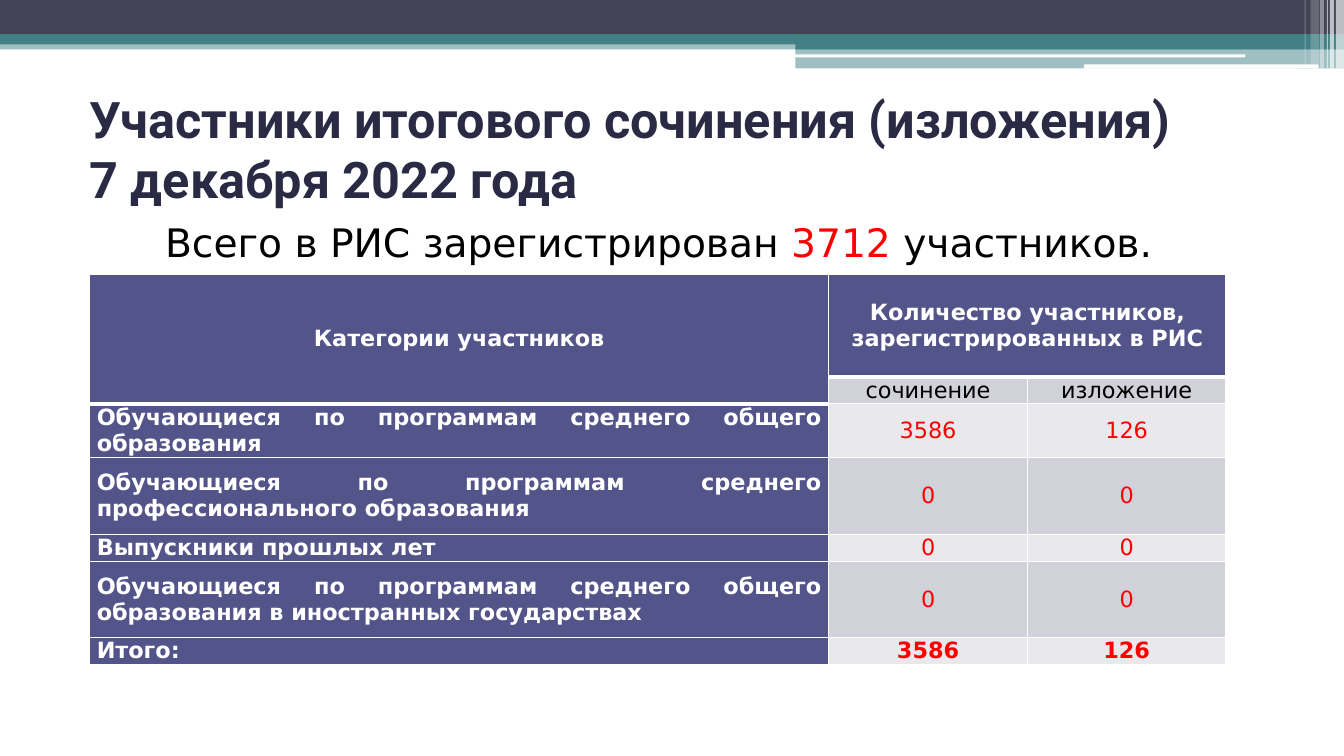
from dataclasses import dataclass

from lxml import etree
from pptx import Presentation
from pptx.dml.color import RGBColor
from pptx.enum.shapes import MSO_SHAPE
from pptx.enum.text import MSO_ANCHOR, PP_ALIGN
from pptx.oxml.ns import qn
from pptx.util import Inches, Pt

RECT, ROUNDED = MSO_SHAPE.RECTANGLE, MSO_SHAPE.ROUNDED_RECTANGLE
TOP, MIDDLE = MSO_ANCHOR.TOP, MSO_ANCHOR.MIDDLE
LEFT, CENTER, JUSTIFY = PP_ALIGN.LEFT, PP_ALIGN.CENTER, PP_ALIGN.JUSTIFY


@dataclass(frozen=True)
class Theme:
    title_font: str = "Roboto"
    body_font: str = "DejaVu Sans"
    title_size: int = 36
    body_size: int = 28
    table_size: int = 16
    navy: str = "2A2A45"
    slate: str = "424456"
    teal: str = "438086"
    violet: str = "53548A"
    dark_band: str = "D1D1DA"
    light_band: str = "E9E9ED"
    white: str = "FFFFFF"
    black: str = "000000"
    red: str = "FF0000"


THEME = Theme()
WIDTH, HEIGHT = 13.33, 7.5

TITLE = ["Участники итогового сочинения (изложения) ", "7 декабря 2022 года"]
SUMMARY = [
    ("Всего в РИС зарегистрирован ", THEME.black),
    ("3712 ", THEME.red),
    ("участников.", THEME.black),
]
HEADINGS = ["Категории участников", "Количество участников, зарегистрированных в РИС"]
SUBHEADINGS = ["сочинение", "изложение"]
CATEGORIES = [
    ("Обучающиеся по программам среднего общего образования", 3586, 126),
    ("Обучающиеся по программам среднего профессионального образования", 0, 0),
    ("Выпускники прошлых лет", 0, 0),
    ("Обучающиеся по программам среднего общего образования в иностранных государствах", 0, 0),
    ("Итого: ", 3586, 126),
]

# shape, left, top, width, height, colour, opacity in percent
BANDS = [
    (RECT, 0, 0.4, WIDTH, 0.09, THEME.teal, 50),
    (RECT, 0, 0, WIDTH, 0.34, THEME.slate, 100),
    (RECT, 0, 0.34, WIDTH, 0.1, THEME.teal, 100),
    (RECT, 7.89, 0.39, 5.44, 0.1, THEME.teal, 100),
    (RECT, 7.89, 0.48, 5.44, 0.2, THEME.teal, 50),
    (ROUNDED, 7.88, 0.54, 4.47, 0.03, THEME.white, 100),
    (ROUNDED, 10.75, 0.64, 2.33, 0.04, THEME.white, 100),
]
# left, width, height, opacity in percent
STRIPES = [
    (13.25, 0.08, 0.68, 65),
    (13.19, 0.04, 0.68, 65),
    (13.16, 0.01, 0.68, 60),
    (13.09, 0.04, 0.68, 40),
    (13, 0.08, 0.64, 20),
    (12.94, 0.01, 0.64, 30),
]

TABLE_LEFT, TABLE_TOP = 0.89, 2.72
COLUMNS = [7.33, 1.97, 1.97]
ROWS = [1.02, 0.25, 0.51, 0.76, 0.25, 0.76, 0.25]
HEADER_ROWS = 2


def add_band(page, kind, left, top, width, height, colour, opacity):
    band = page.shapes.add_shape(kind, *map(Inches, (left, top, width, height)))
    band.shadow.inherit = False
    band.line.fill.background()
    band.fill.solid()
    band.fill.fore_color.rgb = RGBColor.from_string(colour)
    if opacity < 100:
        tone = band.fill._xPr.find(".//" + qn("a:srgbClr"))
        etree.SubElement(tone, qn("a:alpha"), val=str(opacity * 1000))


def add_span(para, text, font, size, colour, bold=False):
    span = para.add_run()
    span.text = text
    for name, value in {"name": font, "size": Pt(size), "bold": bold}.items():
        setattr(span.font, name, value)
    span.font.color.rgb = RGBColor.from_string(colour)


def add_text_area(page, left, top, width, height, anchor):
    """Add a wrapped text box and return its first paragraph."""
    box = page.shapes.add_textbox(*map(Inches, (left, top, width, height)))
    box.text_frame.word_wrap = True
    box.text_frame.vertical_anchor = anchor
    para = box.text_frame.paragraphs[0]
    para.alignment = LEFT
    return para


def set_borders(cell, bottom):
    properties = cell._tc.get_or_add_tcPr()
    for side, points in {"L": 1, "R": 1, "T": 1, "B": bottom}.items():
        line = etree.SubElement(properties, qn("a:ln" + side), w=str(Pt(points)))
        fill = etree.SubElement(line, qn("a:solidFill"))
        etree.SubElement(fill, qn("a:srgbClr"), val=THEME.white)


def format_cell(cell, text, fill, colour, bold, align=CENTER, bottom=1):
    set_borders(cell, bottom)
    cell.fill.solid()
    cell.fill.fore_color.rgb = RGBColor.from_string(fill)
    layout = {
        "vertical_anchor": MIDDLE,
        "margin_left": Inches(0.07),
        "margin_right": Inches(0.07),
        "margin_top": 0,
        "margin_bottom": 0,
    }
    for name, value in layout.items():
        setattr(cell, name, value)
    para = cell.text_frame.paragraphs[0]
    para.alignment = align
    para.font.size = Pt(THEME.table_size)
    if text:
        add_span(para, text, THEME.body_font, THEME.table_size, colour, bold)


def add_participants_table(page):
    frame = page.shapes.add_table(
        len(ROWS), len(COLUMNS), Inches(TABLE_LEFT), Inches(TABLE_TOP),
        Inches(sum(COLUMNS)), Inches(sum(ROWS)))
    table = frame.table
    table.first_row = table.horz_banding = False
    for column, width in zip(table.columns, COLUMNS):
        column.width = Inches(width)
    for row, height in zip(table.rows, ROWS):
        row.height = Inches(height)

    for index, text in enumerate(HEADINGS + [""]):
        format_cell(table.cell(0, index), text, THEME.violet, THEME.white, True, bottom=3)
    format_cell(table.cell(1, 0), "", THEME.violet, THEME.white, True, bottom=3)
    for index, text in enumerate(SUBHEADINGS, 1):
        format_cell(table.cell(1, index), text, THEME.dark_band, THEME.black, False)
    table.cell(0, 0).merge(table.cell(1, 0))
    table.cell(0, 1).merge(table.cell(0, 2))

    for row, (category, *counts) in enumerate(CATEGORIES, HEADER_ROWS):
        format_cell(table.cell(row, 0), category, THEME.violet, THEME.white, True, JUSTIFY)
        band = THEME.dark_band if row % 2 else THEME.light_band
        is_total = row == len(ROWS) - 1
        for column, count in enumerate(counts, 1):
            format_cell(table.cell(row, column), str(count), band, THEME.red, is_total)


def main():
    deck = Presentation()
    deck.slide_width, deck.slide_height = Inches(WIDTH), Inches(HEIGHT)
    page = deck.slides.add_slide(deck.slide_layouts[6])

    for band in BANDS:
        add_band(page, *band)
    for left, width, height, opacity in STRIPES:
        add_band(page, RECT, left, 0, width, height, THEME.white, opacity)

    title = add_text_area(page, 0.79, 1.07, 11.73, 0.8, MIDDLE)
    for index, line in enumerate(TITLE):
        if index:
            title.add_line_break()
        add_span(title, line, THEME.title_font, THEME.title_size, THEME.navy, True)

    summary = add_text_area(page, 1.42, 2.12, 10.5, 0.71, TOP)
    summary.space_before = Pt(3)
    indents = summary._p.get_or_add_pPr()
    indents.set("marL", str(Inches(0.4)))
    indents.set("indent", str(Inches(-0.28)))
    for text, colour in SUMMARY:
        add_span(summary, text, THEME.body_font, THEME.body_size, colour)

    add_participants_table(page)
    deck.save("out.pptx")


if __name__ == "__main__":
    main()
